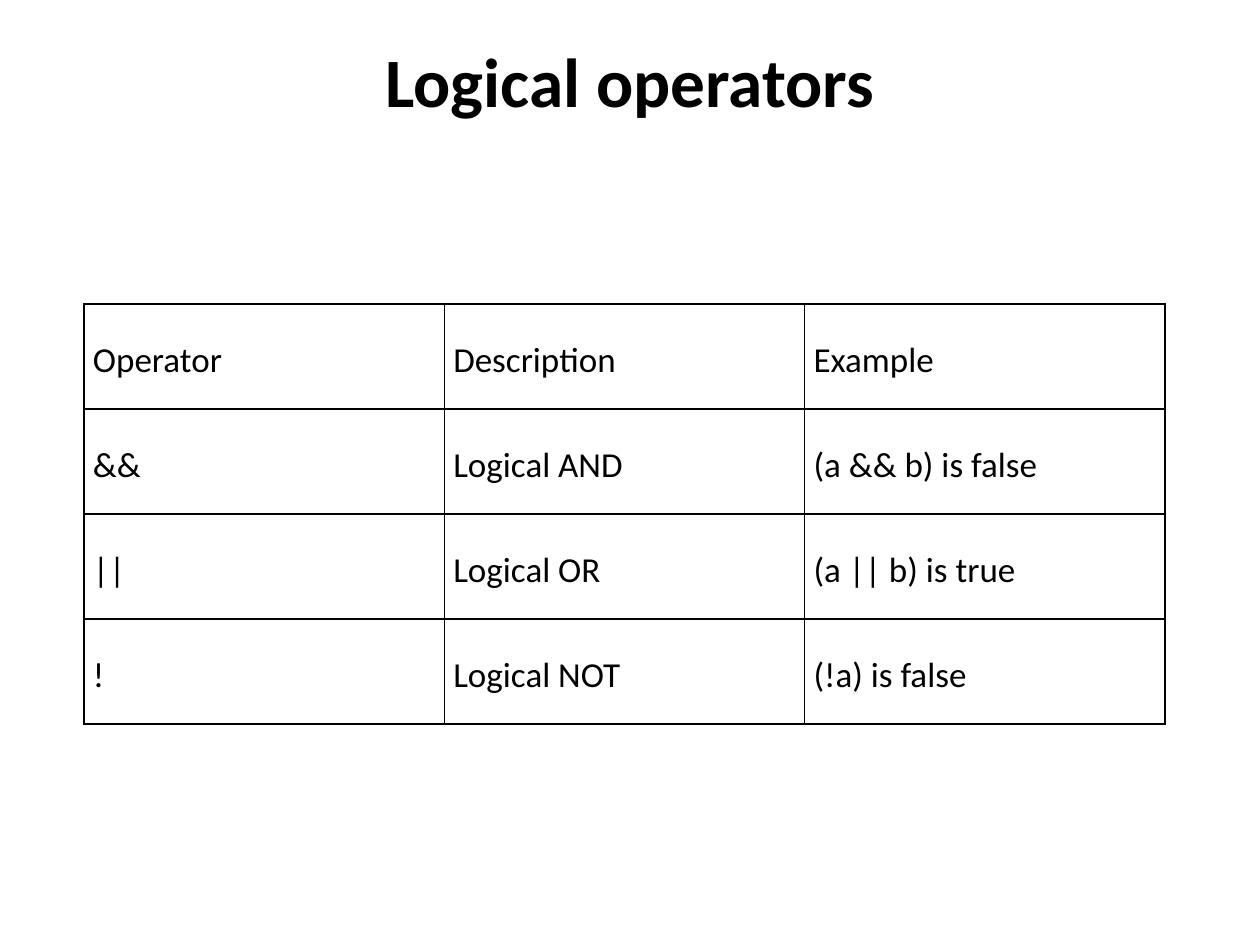
import pptx
import pptx.dml.color
import pptx.enum.text
import pptx.oxml
import pptx.oxml.ns
import pptx.util

PX = 914400 // 126
BLACK = pptx.dml.color.RGBColor(0, 0, 0)
FONT = "Calibri"
TITLE_ONLY = 5
OPERATORS = [
    ("Operator", "Description", "Example"),
    ("&&", "Logical AND", "(a && b) is false"),
    ("||", "Logical OR", "(a || b) is true"),
    ("!", "Logical NOT", "(!a) is false"),
]


def px(length):
    return pptx.util.Emu(length * PX)


def add_span(para, text, size, bold=False):
    span = para.add_run()
    span.text = text
    span.font.name = FONT
    span.font.size = pptx.util.Pt(size)
    span.font.bold = bold
    span.font.color.rgb = BLACK


def add_title(page, text):
    title = page.shapes.title
    title.left, title.top, title.width, title.height = map(px, (63, 38, 1134, 157))
    frame = title.text_frame
    frame.vertical_anchor = pptx.enum.text.MSO_ANCHOR.TOP
    frame.margin_top = 0
    para = frame.paragraphs[0]
    para.alignment = pptx.enum.text.PP_ALIGN.CENTER
    add_span(para, text, 39.6, bold=True)


def add_borders(cell):
    """Draw a thin black line on all four sides of a cell."""
    properties = cell._tc.get_or_add_tcPr()
    for index, side in enumerate(("lnL", "lnR", "lnT", "lnB")):
        line = pptx.oxml.parse_xml(
            f'<a:{side} {pptx.oxml.ns.nsdecls("a")} w="{pptx.util.Pt(1)}">'
            f'<a:solidFill><a:srgbClr val="{BLACK}"/></a:solidFill></a:{side}>'
        )
        properties.insert(index, line)


def fill_cell(cell, text):
    cell.fill.background()
    add_borders(cell)
    cell.margin_left = cell.margin_right = px(9)
    cell.margin_top, cell.margin_bottom = px(52), 0
    para = cell.text_frame.paragraphs[0]
    para.line_spacing = pptx.util.Pt(15)
    add_span(para, text, 20)


def add_operator_table(page, rows):
    frame = page.shapes.add_table(
        len(rows), len(rows[0]), px(84), px(304), px(1081), px(420)
    )
    table = frame.table
    table.first_row = table.horz_banding = False
    for row_index, row in enumerate(rows):
        for column_index, text in enumerate(row):
            fill_cell(table.cell(row_index, column_index), text)


def main():
    deck = pptx.Presentation()
    deck.slide_width, deck.slide_height = px(1260), px(945)
    page = deck.slides.add_slide(deck.slide_layouts[TITLE_ONLY])
    add_title(page, "Logical operators")
    add_operator_table(page, OPERATORS)
    deck.save("out.pptx")


if __name__ == "__main__":
    main()
